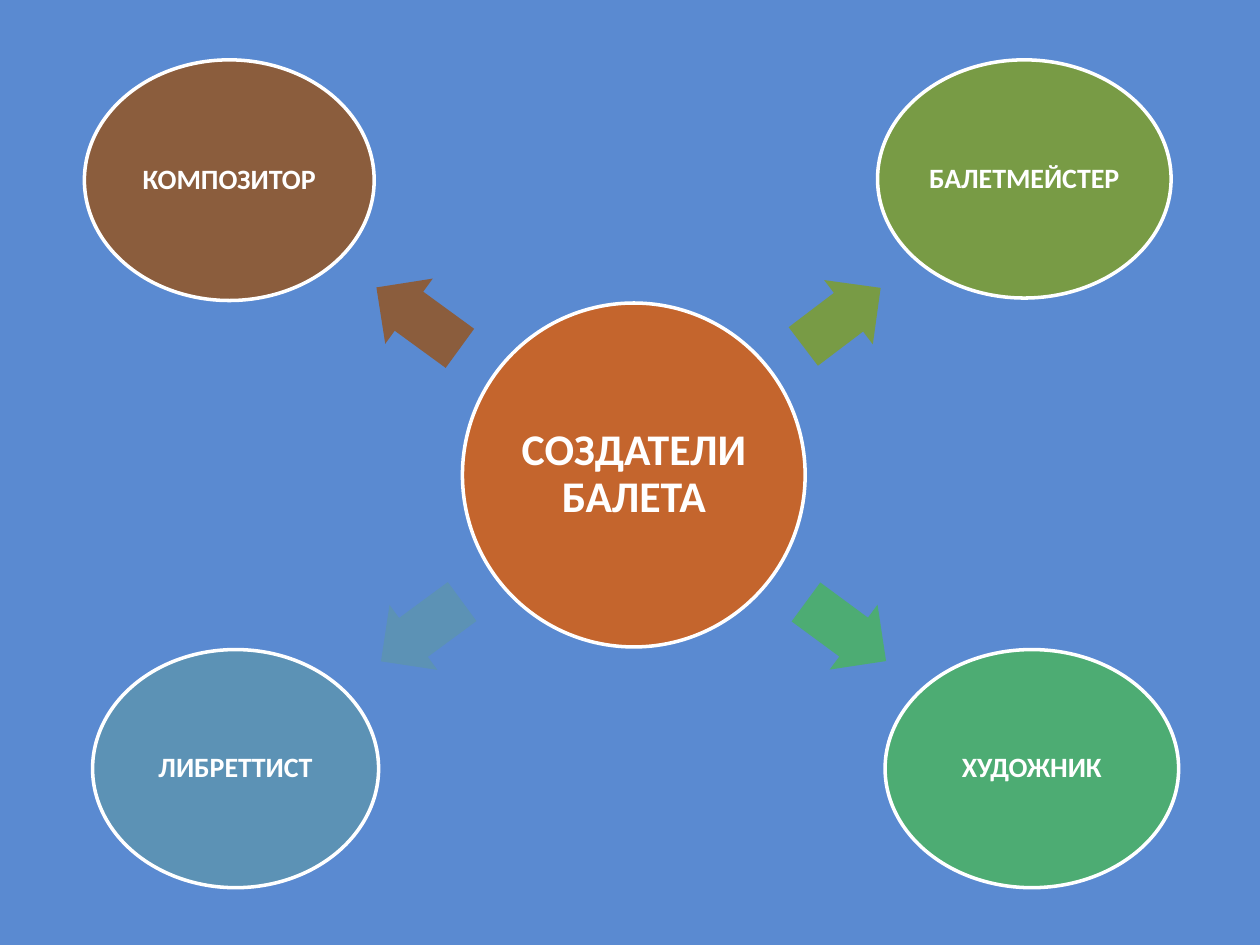
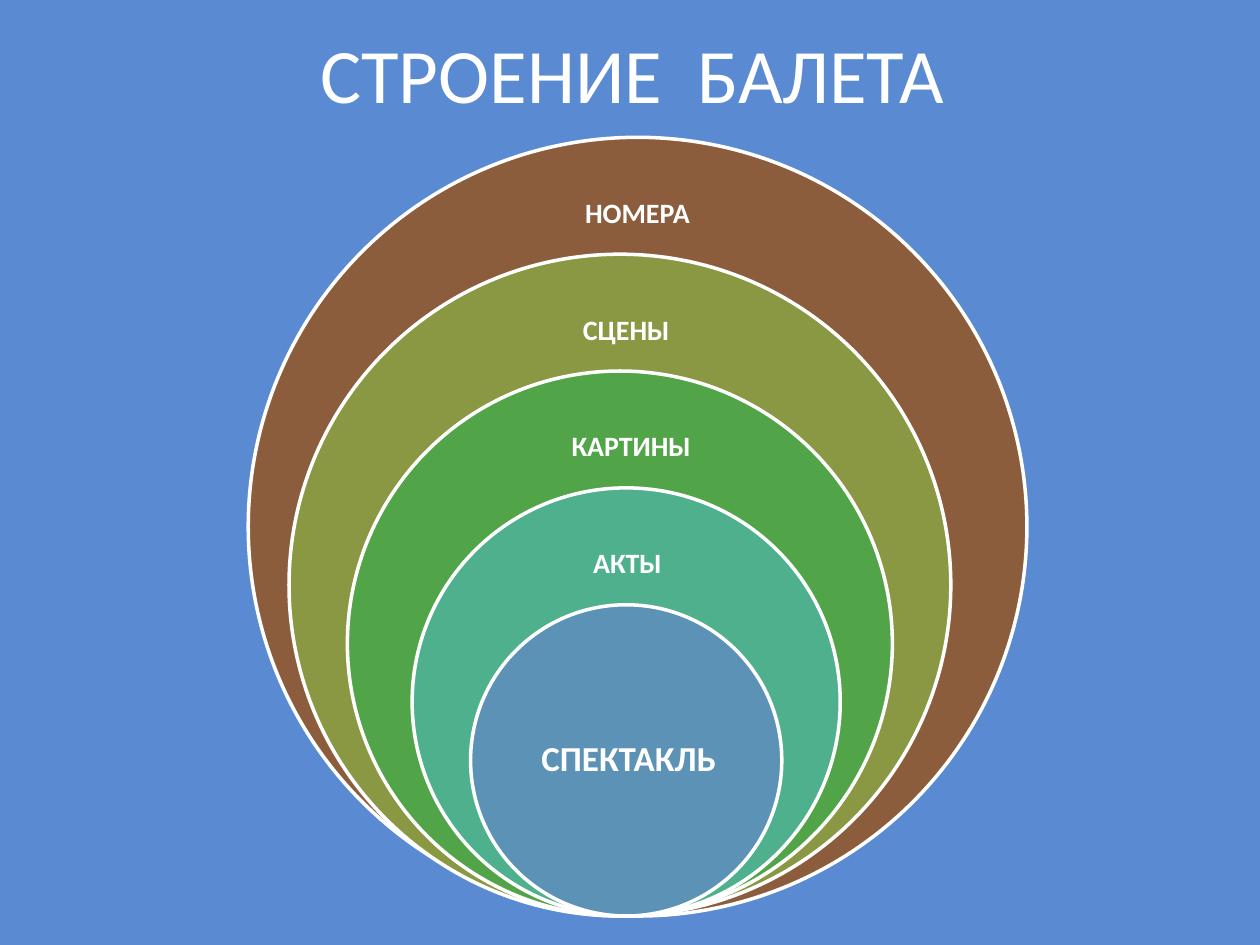
import math

import pptx
import pptx.dml.color
import pptx.enum.shapes
import pptx.enum.text
import pptx.util

SLIDE_WIDTH, SLIDE_HEIGHT = 10, 7.5
FONT = "Calibri"
WHITE, BACKGROUND = "FFFFFF", "5A8AD1"
BROWN, STEEL = "8B5D3D", "5C92B5"

# Centre x, centre y, width, height
HUB = ("СОЗДАТЕЛИ БАЛЕТА", "C4652D", (5.03, 3.77, 2.72, 2.73))
# Label, colour, ellipse, length of the arrow that points to it
CREATORS = [
    ("КОМПОЗИТОР", BROWN, (1.82, 1.43, 2.3, 1.91), 0.82),
    ("БАЛЕТМЕЙСТЕР", "789B45", (8.13, 1.42, 2.33, 1.89), 0.77),
    ("ХУДОЖНИК", "4DAC73", (8.19, 6.1, 2.33, 1.89), 0.79),
    ("ЛИБРЕТТИСТ", STEEL, (1.87, 6.1, 2.27, 1.89), 0.8),
]
ARROW_HEIGHT = 0.64
ARROW_SHARE = 0.533  # share of the way from the hub to a creator

TITLE_WORDS = ("СТРОЕНИЕ", "БАЛЕТА")
# Label, colour, ring centre x, label centre x, text size; outermost first
RINGS = [
    ("НОМЕРА", BROWN, 5.06, 5.06, 16),
    ("СЦЕНЫ", "8A9743", 4.92, 4.97, 16),
    ("КАРТИНЫ", "52A449", 4.92, 5.01, 16),
    ("АКТЫ", "4FB08E", 4.97, 4.98, 16),
    ("СПЕКТАКЛЬ", STEEL, 4.97, 4.99, 20),
]
RINGS_BOTTOM = 7.27
LARGEST, SMALLEST = 6.18, 2.47
LABEL_DROP = 0.61  # from the top of a ring to the middle of its label
LABEL_WIDTH, LABEL_HEIGHT = 2.2, 0.6


def rgb(hex_string):
    return pptx.dml.color.RGBColor.from_string(hex_string)


def box(center_x, center_y, width, height):
    """Turn a centre and a size in inches into left, top, width, height."""
    sides = (center_x - width / 2, center_y - height / 2, width, height)
    return [pptx.util.Inches(side) for side in sides]


def new_slide(presentation, layout_name):
    layout = presentation.slide_layouts.get_by_name(layout_name)
    slide = presentation.slides.add_slide(layout)
    slide.background.fill.solid()
    slide.background.fill.fore_color.rgb = rgb(BACKGROUND)
    return slide


def add_filled(slide, kind, place, color, outlined=True):
    shape = slide.shapes.add_shape(kind, *box(*place))
    shape.shadow.inherit = False
    shape.fill.solid()
    shape.fill.fore_color.rgb = rgb(color)
    if outlined:
        shape.line.color.rgb = rgb(WHITE)
        shape.line.width = pptx.util.Pt(2)
    else:
        shape.line.fill.background()
    return shape


def add_ellipse(slide, place, color):
    return add_filled(slide, pptx.enum.shapes.MSO_SHAPE.OVAL, place, color)


def write_label(shape, text, size):
    frame = shape.text_frame
    frame.word_wrap = True
    frame.vertical_anchor = pptx.enum.text.MSO_ANCHOR.MIDDLE
    frame.margin_left = frame.margin_right = pptx.util.Inches(0.02)
    frame.margin_top = frame.margin_bottom = pptx.util.Inches(0.02)
    paragraph = frame.paragraphs[0]
    paragraph.text = text
    paragraph.alignment = pptx.enum.text.PP_ALIGN.CENTER
    paragraph.line_spacing = 0.9
    paragraph.font.bold = True
    format_font(paragraph, size)


def format_font(paragraph, size):
    paragraph.font.name = FONT
    paragraph.font.size = pptx.util.Pt(size)
    paragraph.font.color.rgb = rgb(WHITE)


def add_arrow(slide, target, length, color):
    """Place an arrow on the line from the hub to the target's centre."""
    hub_x, hub_y = HUB[2][:2]
    run, rise = target[0] - hub_x, target[1] - hub_y
    place = (hub_x + ARROW_SHARE * run, hub_y + ARROW_SHARE * rise,
             length, ARROW_HEIGHT)
    arrow = add_filled(slide, pptx.enum.shapes.MSO_SHAPE.RIGHT_ARROW,
                       place, color, outlined=False)
    arrow.adjustments[0] = 0.6
    arrow.adjustments[1] = 0.5
    arrow.rotation = math.degrees(math.atan2(rise, run)) % 360


def build_creators(presentation):
    slide = new_slide(presentation, "Blank")
    text, color, place = HUB
    write_label(add_ellipse(slide, place, color), text, 25)
    for text, color, place, arrow_length in CREATORS:
        add_arrow(slide, place, arrow_length, color)
        write_label(add_ellipse(slide, place, color), text, 16)


def write_title(slide):
    title = slide.shapes.title
    title.left, title.top, title.width, title.height = box(5.02, 0.58, 6.09, 0.84)
    frame = title.text_frame
    frame.auto_size = pptx.enum.text.MSO_AUTO_SIZE.NONE
    frame.vertical_anchor = pptx.enum.text.MSO_ANCHOR.TOP
    paragraph = frame.paragraphs[0]
    paragraph.alignment = pptx.enum.text.PP_ALIGN.CENTER
    first, second = TITLE_WORDS
    for text in (first, " ", second):
        run = paragraph.add_run()
        run.text = text
        if text == " ":  # widen the word gap by 10 points
            run.font._element.set("spc", "1000")
    format_font(paragraph, 44)


def build_structure(presentation):
    slide = new_slide(presentation, "Title Only")
    write_title(slide)
    step = (LARGEST - SMALLEST) / (len(RINGS) - 1)
    for index, (text, color, ring_x, label_x, size) in enumerate(RINGS):
        diameter = LARGEST - index * step
        middle = RINGS_BOTTOM - diameter / 2
        add_ellipse(slide, (ring_x, middle, diameter, diameter), color)
        innermost = index == len(RINGS) - 1
        label_y = middle if innermost else RINGS_BOTTOM - diameter + LABEL_DROP
        label = slide.shapes.add_textbox(
            *box(label_x, label_y, LABEL_WIDTH, LABEL_HEIGHT))
        write_label(label, text, size)


def main():
    presentation = pptx.Presentation()
    presentation.slide_width = pptx.util.Inches(SLIDE_WIDTH)
    presentation.slide_height = pptx.util.Inches(SLIDE_HEIGHT)
    build_creators(presentation)
    build_structure(presentation)
    presentation.save("out.pptx")


if __name__ == "__main__":
    main()
